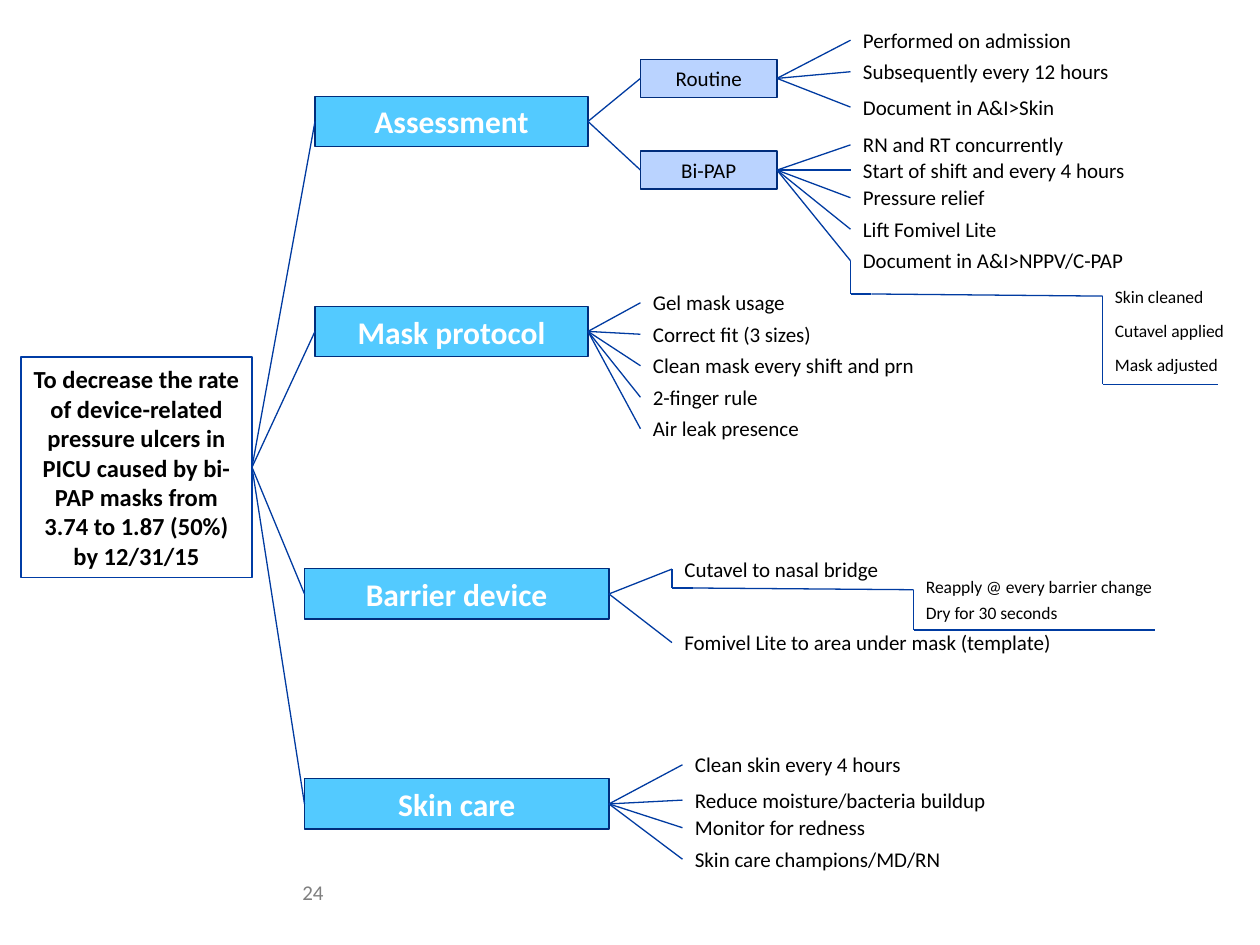
from itertools import pairwise

from lxml.etree import SubElement
from pptx import Presentation
from pptx.dml.color import RGBColor
from pptx.enum.shapes import MSO_CONNECTOR as Conn, MSO_SHAPE as Shape
from pptx.enum.text import MSO_ANCHOR as Anchor, MSO_AUTO_SIZE as Fit, PP_ALIGN as Align
from pptx.oxml.ns import qn
from pptx.util import Pt

FONT = "Calibri"
BLACK, WHITE, GREY = "000000", "FFFFFF", "7F7F7F"
CYAN, PALE = "53CAFF", "BAD3FF"
EDGE, RULE, FRAME = "002D7C", "003BA1", "003CA5"
TOPIC_H, SUB_H, LEAF_H, NOTE_H = 28.8, 21.8, 21.8, 19.4
RIGHT, LEFT = 3, 1

GOAL = ("To decrease the rate of device-related pressure ulcers in PICU caused "
        "by bi-PAP masks from 3.74 to 1.87 (50%) by 12/31/15")

# Topic: name, left, middle, width, left of leaves, leaves
# Leaf: text, middle, width
TOPICS = [
    ("Assessment", 180, 69.4, 156, 0, []),
    ("Mask protocol", 180, 189.4, 156, 366, [
        ("Gel mask usage", 173, 144),
        ("Correct fit (3 sizes)", 191, 144),
        ("Clean mask every shift and prn", 209, 174),
        ("2-finger rule", 227, 174),
        ("Air leak presence", 245, 114)]),
    ("Barrier device", 174, 339.4, 174, 384, [
        ("Cutavel to nasal bridge", 325.2, 126),
        ("Fomivel Lite to area under mask (template)", 367.2, 246)]),
    ("Skin care", 174, 459.4, 174, 390, [
        ("Clean skin every 4 hours", 437, 168),
        ("Reduce moisture/bacteria buildup", 457.2, 192),
        ("Monitor for redness", 473, 168),
        ("Skin care champions/MD/RN", 491, 177)]),
]
# Branches of the first topic, in the same form
SUBS = [
    ("Routine", 366, 44.8, 78, 486, [
        ("Performed on admission", 23, 138),
        ("Subsequently every 12 hours", 41, 156),
        ("Document in A&I>Skin", 61.2, 132)]),
    ("Bi-PAP", 366, 97.2, 78, 486, [
        ("RN and RT concurrently", 82.8, 168),
        ("Start of shift and every 4 hours", 97.2, 168),
        ("Pressure relief", 113, 168),
        ("Lift Fomivel Lite", 131, 168),
        ("Document in A&I>NPPV/C-PAP", 149, 174)]),
]
# Notes: left, first top, step, (text, width) rows, points of the bracket
NOTES = [
    (630, 159.8, 19.4,
     [("Skin cleaned", 84), ("Cutavel applied", 90), ("Mask adjusted", 90)],
     [(486, 149), (486, 168), (498, 168), (630, 169.2), (630, 219.6), (696, 219.6)]),
    (522, 325.4, 15.2,
     [("Reapply @ every barrier change", 168), ("Dry for 30 seconds", 144)],
     [(384, 325.2), (384, 336), (396, 336), (522, 337), (522, 360), (660, 360)]),
]


def rgb(code):
    return RGBColor.from_string(code)


def write(box, text, size, color=BLACK, bold=False, align=Align.LEFT, fit=Fit.SHAPE_TO_FIT_TEXT):
    frame = box.text_frame
    frame.text = text
    frame.word_wrap = True
    frame.auto_size = fit
    para = frame.paragraphs[0]
    para.alignment = align
    font = para.font
    font.name, font.size, font.bold = FONT, Pt(size), bold
    font.color.rgb = rgb(color)


def label(x, y, w, h, text, size, **style):
    box = slide.shapes.add_textbox(Pt(x), Pt(y), Pt(w), Pt(h))
    write(box, text, size, **style)
    return box


def block(x, y, w, h, fill, edge):
    box = slide.shapes.add_shape(Shape.RECTANGLE, Pt(x), Pt(y), Pt(w), Pt(h))
    box.shadow.inherit = False
    if fill:
        box.fill.solid()
        box.fill.fore_color.rgb = rgb(fill)
    else:
        box.fill.background()
    box.line.color.rgb = rgb(edge)
    box.line.width = Pt(0.75)
    box.text_frame.vertical_anchor = Anchor.MIDDLE
    return box


def rule(x1=0, y1=0, x2=0, y2=0):
    line = slide.shapes.add_connector(Conn.STRAIGHT, Pt(x1), Pt(y1), Pt(x2), Pt(y2))
    line.line.color.rgb = rgb(RULE)
    line.line.width = Pt(0.75)
    SubElement(line._element.spPr, qn("a:effectLst"))
    return line


def link(a, b):
    """Join the right side of a to the left side of b."""
    line = rule()
    line.begin_connect(a, RIGHT)
    line.end_connect(b, LEFT)


def branch(root, row, h, fill, size, color, bold):
    """Draw one box, its link to root and its leaves."""
    name, x, mid, w, leaf_x, leaves = row
    box = block(x, mid - h / 2, w, h, fill, EDGE)
    write(box, name, size, color, bold, Align.CENTER)
    link(root, box)
    for text, leaf_mid, leaf_w in leaves:
        link(box, label(leaf_x, leaf_mid - LEAF_H / 2, leaf_w, LEAF_H, text, 12))
    return box


deck = Presentation()
deck.slide_width, deck.slide_height = Pt(720), Pt(540)
slide = deck.slides.add_slide(deck.slide_layouts[6])

goal = block(12, 204, 132, 126, None, FRAME)
write(goal, GOAL, 14, bold=True, align=Align.CENTER)

topics = [branch(goal, row, TOPIC_H, CYAN, 18, WHITE, True) for row in TOPICS]
for row in SUBS:
    branch(topics[0], row, SUB_H, PALE, 12, BLACK, False)

for x, top, step, rows, points in NOTES:
    for i, (text, w) in enumerate(rows):
        label(x, top + i * step, w, NOTE_H, text, 10)
    for start, end in pairwise(points):
        rule(*start, *end)

label(24, 499, 168, 28.8, "24", 12, color=GREY, align=Align.RIGHT, fit=Fit.NONE)

deck.save("out.pptx")
